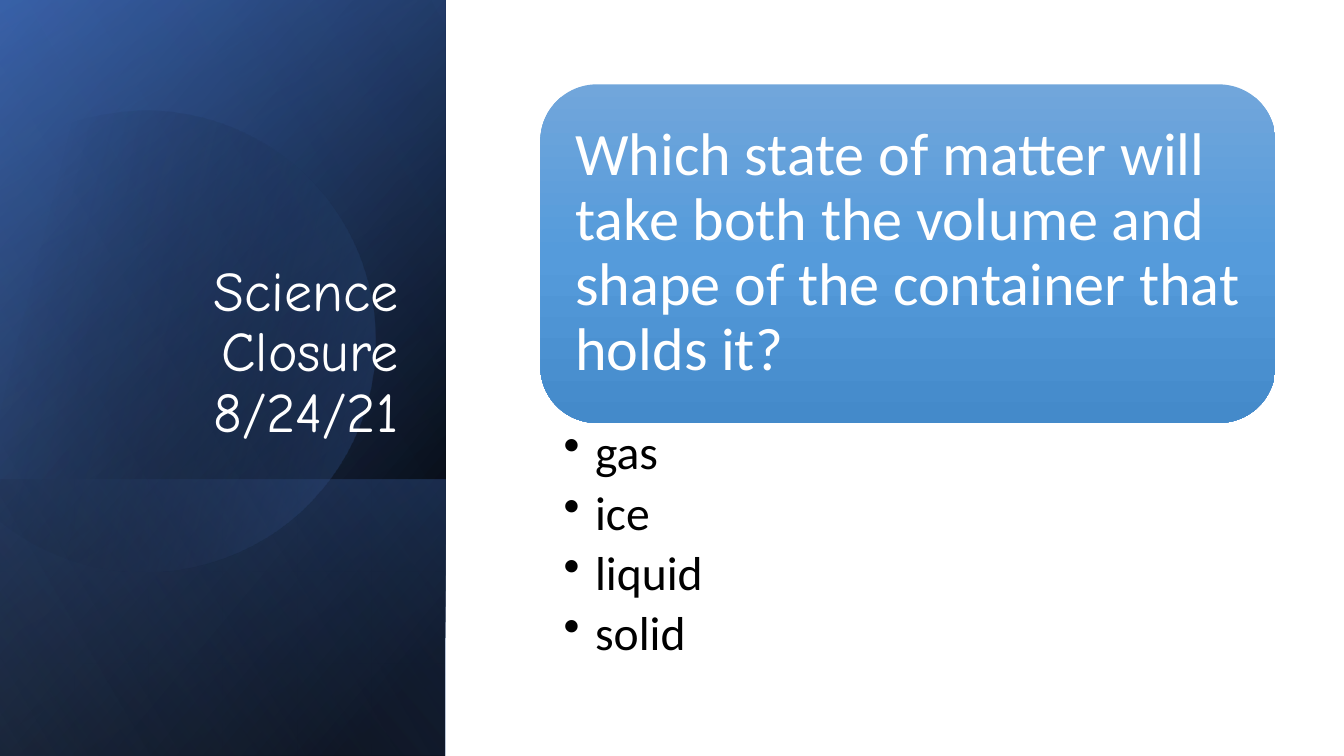
from dataclasses import dataclass
from math import cos, radians, sin

from lxml.etree import SubElement
from pptx import Presentation
from pptx.dml.color import RGBColor
from pptx.enum.shapes import MSO_SHAPE
from pptx.enum.text import MSO_ANCHOR, PP_ALIGN
from pptx.oxml.ns import qn
from pptx.util import Pt

RECT = MSO_SHAPE.RECTANGLE
ROUND = MSO_SHAPE.ROUNDED_RECTANGLE
TOP, MIDDLE, BOTTOM = MSO_ANCHOR.TOP, MSO_ANCHOR.MIDDLE, MSO_ANCHOR.BOTTOM
LEFT, RIGHT = PP_ALIGN.LEFT, PP_ALIGN.RIGHT


@dataclass(frozen=True)
class Theme:
    """Colours, fonts and type sizes of the slide."""
    white: str = "FFFFFF"
    black: str = "000000"
    blue: str = "4472C4"
    navy: str = "2F5597"
    pale: str = "8FAADC"
    card: tuple = ("71A6DB", "559BDB", "448ACA")
    head: str = "Comic Neue"
    body: str = "Calibri"
    title: int = 40
    ask: int = 43
    item: int = 34


THEME = Theme()
WIDE, HIGH = 960, 540
SIDE = 318.24
TILT = -16.1
HUB = (114.12, 240.84)
START = (107.3, 79.2)
ARCS = [
    [(177.1, 80.6), (241.2, 127.4), (261.4, 198)],
    [(286.6, 285.8), (236.2, 376.6), (149, 401.8)],
    [(94.3, 417.6), (38.2, 403.9), (-2.2, 370.1)],
    [(-10.8, 362.2)],
    [(-10.8, 126)],
    [(0, 115.9)],
    [(16.6, 102.2), (36, 92.2), (57.6, 85.7)],
    [(74.2, 81.4), (90.7, 79.2), START],
]


def shade(shape, stops, angle):
    """Fill with a gradient of (place, colour, opacity) stops, without line or shadow."""
    shape.shadow.inherit = False
    shape.line.fill.background()
    shape.fill.gradient()
    shape.fill.gradient_angle = 360 - angle
    ramp = next(shape.element.iter(qn("a:gsLst")))
    ramp.clear()
    for place, colour, alpha in stops:
        stop = SubElement(ramp, qn("a:gs"), pos=str(place * 1000))
        tint = SubElement(stop, qn("a:srgbClr"), val=colour)
        if alpha < 100:
            SubElement(tint, qn("a:alpha"), val=str(alpha * 1000))


def add_panel(slide, top, stops, angle):
    """Add a side panel, turned and flipped, from top to the foot of the slide."""
    tall = HIGH - top
    left, rise = (SIDE - tall) / 2, top + (tall - SIDE) / 2
    panel = slide.shapes.add_shape(RECT, Pt(left), Pt(rise), Pt(tall), Pt(SIDE))
    panel.rotation = 90
    panel.element.spPr.xfrm.set("flipH", "1")
    shade(panel, stops, angle)


def trace(start, arcs, steps=24):
    """Return the points along a chain of cubic curves and straight lines."""
    points = [start]
    for arc in arcs:
        if len(arc) == 1:
            points += arc
            continue
        knots = [points[-1], *arc]
        for step in range(1, steps + 1):
            t = step / steps
            parts = ((1 - t) ** 3, 3 * t * (1 - t) ** 2, 3 * t * t * (1 - t), t ** 3)
            points.append(tuple(sum(p * k[axis] for p, k in zip(parts, knots))
                                for axis in (0, 1)))
    return points


def spin(point, angle):
    """Turn a point clockwise about the hub and return it as lengths."""
    turn = radians(angle)
    x, y = point[0] - HUB[0], point[1] - HUB[1]
    return (Pt(HUB[0] + x * cos(turn) - y * sin(turn)),
            Pt(HUB[1] + x * sin(turn) + y * cos(turn)))


def add_disc(slide, stops, angle):
    """Add the tilted disc that is cut off at the left edge."""
    points = [spin(point, -TILT) for point in trace(START, ARCS)]
    path = slide.shapes.build_freeform(*points[0])
    path.add_line_segments(points[1:], close=True)
    disc = path.convert_to_shape()
    disc.rotation = 360 + TILT
    shade(disc, stops, angle)


def add_card(slide, box, stops, angle):
    """Add the rounded card behind the question."""
    card = slide.shapes.add_shape(ROUND, *map(Pt, box))
    shade(card, stops, angle)


def add_text(slide, box, lines, font, size, colour, pad, anchor=TOP, align=LEFT, after=0):
    """Add a text box with one paragraph per line and return its paragraphs."""
    frame = slide.shapes.add_textbox(*map(Pt, box)).text_frame
    frame.word_wrap = True
    frame.vertical_anchor = anchor
    (frame.margin_left, frame.margin_top,
     frame.margin_right, frame.margin_bottom) = map(Pt, pad)
    frame.text = "\n".join(lines)
    for para in frame.paragraphs:
        para.alignment = align
        para.line_spacing = 0.9
        para.space_after = Pt(after)
        for run in para.runs:
            run.font.name = font
            run.font.size = Pt(size)
            run.font.color.rgb = RGBColor.from_string(colour)
    return frame.paragraphs


def add_dots(paras, indent):
    """Give paragraphs a round bullet with a hanging indent."""
    for para in paras:
        para.level = 1
        props = para._p.get_or_add_pPr()
        props.set("marL", str(Pt(indent)))
        props.set("indent", str(-Pt(indent)))
        SubElement(props, qn("a:buChar"), char="•")


def main():
    """Build the slide and save it."""
    deck = Presentation()
    deck.slide_width, deck.slide_height = Pt(WIDE), Pt(HIGH)
    slide = deck.slides.add_slide(deck.slide_layouts[6])
    t = THEME

    add_panel(slide, 0, [(8, t.black, 100), (100, t.navy, 100)], 50)
    add_panel(slide, 0, [(0, t.black, 0), (99, t.blue, 46)], 30)
    add_panel(slide, 342.7, [(2, t.blue, 29), (100, t.black, 30)], 130)
    add_disc(slide, [(29, t.black, 0), (100, t.blue, 43)], 30)
    add_panel(slide, 0, [(0, t.black, 0), (99, t.pale, 11)], 120)
    add_text(slide, (46.1, 132.5, 245.5, 188.6), ["Science Closure\v8/24/21"],
             t.head, t.title, t.white, (7.2, 3.6, 7.2, 3.6), BOTTOM, RIGHT)

    add_card(slide, (386, 60.3, 525, 241.8),
             [(place, tone, 100) for place, tone in zip((0, 50, 100), t.card)], 90)
    add_text(slide, (398, 72, 501, 218.2),
             ["Which state of matter will take both the volume and shape "
              "of the container that holds it?"],
             t.body, t.ask, t.white, (13, 13, 13, 13), MIDDLE)
    items = add_text(slide, (386, 302, 525, 185.8), ["gas", "ice", "liquid", "solid"],
                     t.body, t.item, t.black, (16.6, 4.3, 23.8, 4.3), after=6.2)
    add_dots(items, 22.5)

    deck.save("out.pptx")


if __name__ == "__main__":
    main()
